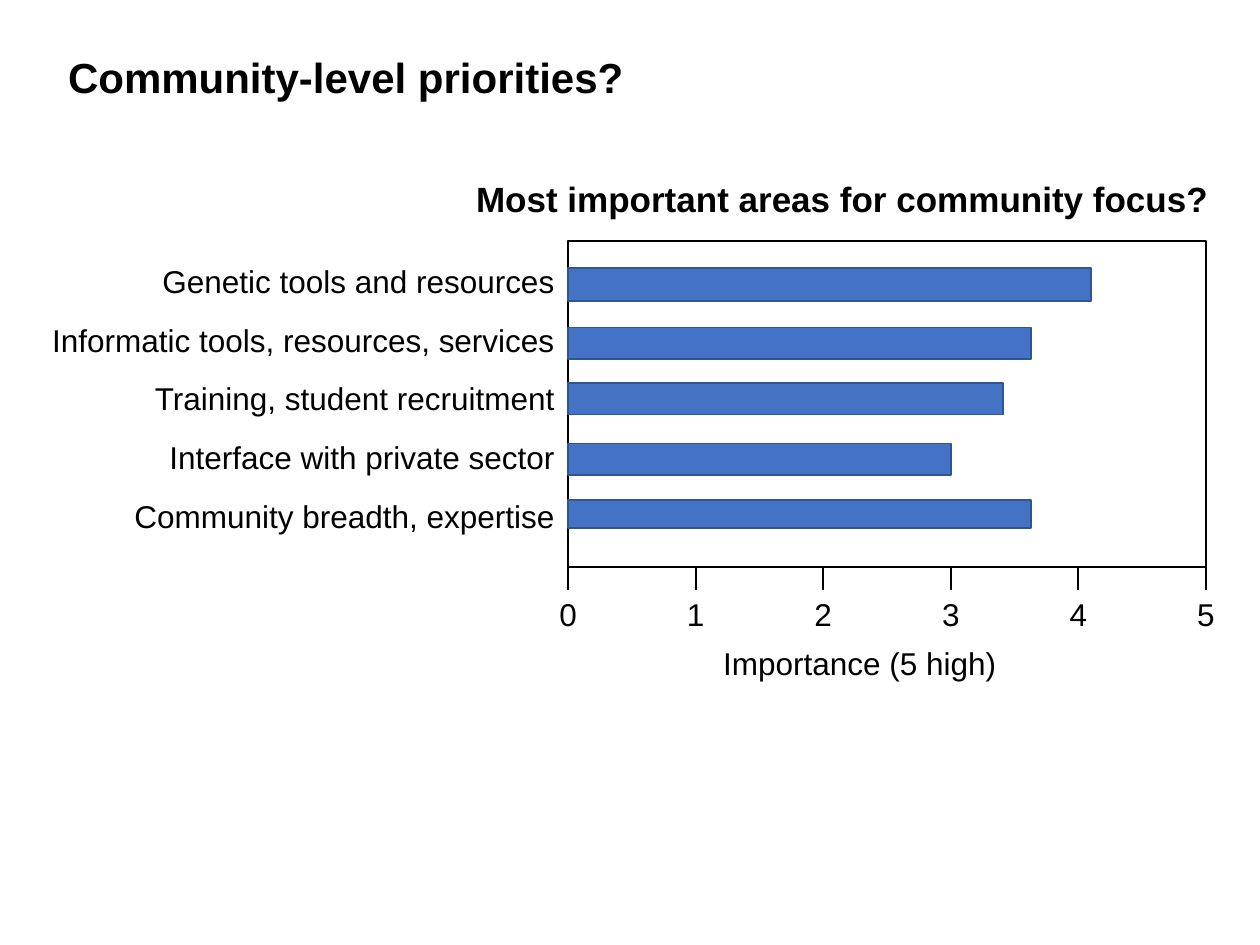
from dataclasses import dataclass
from typing import NamedTuple

from lxml import etree
from pptx import Presentation
from pptx.dml.color import RGBColor
from pptx.enum import shapes, text
from pptx.oxml.ns import qn
from pptx.util import Inches, Pt


@dataclass(frozen=True)
class Theme:
    font: str = "Arial"
    ink: RGBColor = RGBColor(0x00, 0x00, 0x00)
    bar_fill: RGBColor = RGBColor(0x44, 0x72, 0xC4)
    bar_line: RGBColor = RGBColor(0x32, 0x54, 0x91)
    title_size: int = 24
    heading_size: int = 20
    label_size: int = 18
    line_width: int = 1


class Box(NamedTuple):
    left: float
    top: float
    width: float
    height: float

    def lengths(self):
        return [Inches(value) for value in self]


class Bar(NamedTuple):
    label: str
    value: float
    top: float
    height: float


THEME = Theme()
PLOT = Box(4.51, 1.91, 5.06, 2.59)
AXIS_MAXIMUM = 5
UNIT = PLOT.width / AXIS_MAXIMUM
TICK_LENGTH = 0.18
BARS = [
    Bar("Genetic tools and resources", 4.1, 2.13, 0.26),
    Bar("Informatic tools, resources, services", 3.63, 2.6, 0.25),
    Bar("Training, student recruitment", 3.41, 3.04, 0.25),
    Bar("Interface with private sector", 3.0, 3.52, 0.25),
    Bar("Community breadth, expertise", 3.63, 3.97, 0.22),
]


def write_lines(shape, lines: list[str], size: int, bold: bool = False,
                alignment=text.PP_ALIGN.LEFT, space_after: int = 0) -> None:
    frame = shape.text_frame
    frame.word_wrap = False
    frame.auto_size = text.MSO_AUTO_SIZE.NONE
    frame.vertical_anchor = text.MSO_ANCHOR.TOP
    for index, line in enumerate(lines):
        paragraph = frame.add_paragraph() if index else frame.paragraphs[0]
        paragraph.alignment = alignment
        paragraph.space_after = Pt(space_after)
        run = paragraph.add_run()
        run.text = line
        run.font.name = THEME.font
        run.font.size = Pt(size)
        run.font.bold = bold
        run.font.color.rgb = THEME.ink


def add_text(slide, box: Box, lines: list[str], size: int, **options) -> None:
    write_lines(slide.shapes.add_textbox(*box.lengths()), lines, size, **options)


def add_title(slide, box: Box, title: str) -> None:
    shape = slide.shapes.title
    shape.left, shape.top, shape.width, shape.height = box.lengths()
    write_lines(shape, [title], THEME.title_size, bold=True)


def add_rectangle(slide, box: Box, line: RGBColor,
                  fill: RGBColor | None = None) -> None:
    shape = slide.shapes.add_shape(shapes.MSO_SHAPE.RECTANGLE, *box.lengths())
    shape.shadow.inherit = False
    shape.line.color.rgb = line
    shape.line.width = Pt(THEME.line_width)
    if fill is None:
        shape.fill.background()
    else:
        shape.fill.solid()
        shape.fill.fore_color.rgb = fill


def add_tick(slide, value: int) -> None:
    """Draw one axis tick with its number centred below."""
    x = PLOT.left + value * UNIT
    bottom = PLOT.top + PLOT.height
    tick = slide.shapes.add_connector(
        shapes.MSO_CONNECTOR.STRAIGHT,
        Inches(x), Inches(bottom), Inches(x), Inches(bottom + TICK_LENGTH))
    tick.line.color.rgb = THEME.ink
    tick.line.width = Pt(THEME.line_width)
    etree.SubElement(tick._element.spPr, qn("a:effectLst"))
    add_text(slide, Box(x - 0.2, 4.67, 0.4, 0.4), [str(value)],
             THEME.label_size, alignment=text.PP_ALIGN.CENTER)


def main() -> None:
    presentation = Presentation()
    presentation.slide_width = Inches(10)
    presentation.slide_height = Inches(7.5)
    slide = presentation.slides.add_slide(
        presentation.slide_layouts.get_by_name("Title Only"))

    add_title(slide, Box(0.44, 0.36, 4.74, 0.5), "Community-level priorities?")
    add_text(slide, Box(3.68, 1.36, 6.06, 0.44),
             ["Most important areas for community focus?"],
             THEME.heading_size, bold=True)
    add_text(slide, Box(0.27, 2.03, 4.23, 2.76), [bar.label for bar in BARS],
             THEME.label_size, alignment=text.PP_ALIGN.RIGHT, space_after=12)

    add_rectangle(slide, PLOT, THEME.ink)
    for bar in BARS:
        add_rectangle(slide, Box(PLOT.left, bar.top, bar.value * UNIT, bar.height),
                      THEME.bar_line, THEME.bar_fill)
    for value in range(AXIS_MAXIMUM + 1):
        add_tick(slide, value)
    add_text(slide, Box(5.64, 5.06, 2.39, 0.49), ["Importance (5 high)"],
             THEME.label_size)

    presentation.save("out.pptx")


if __name__ == "__main__":
    main()
